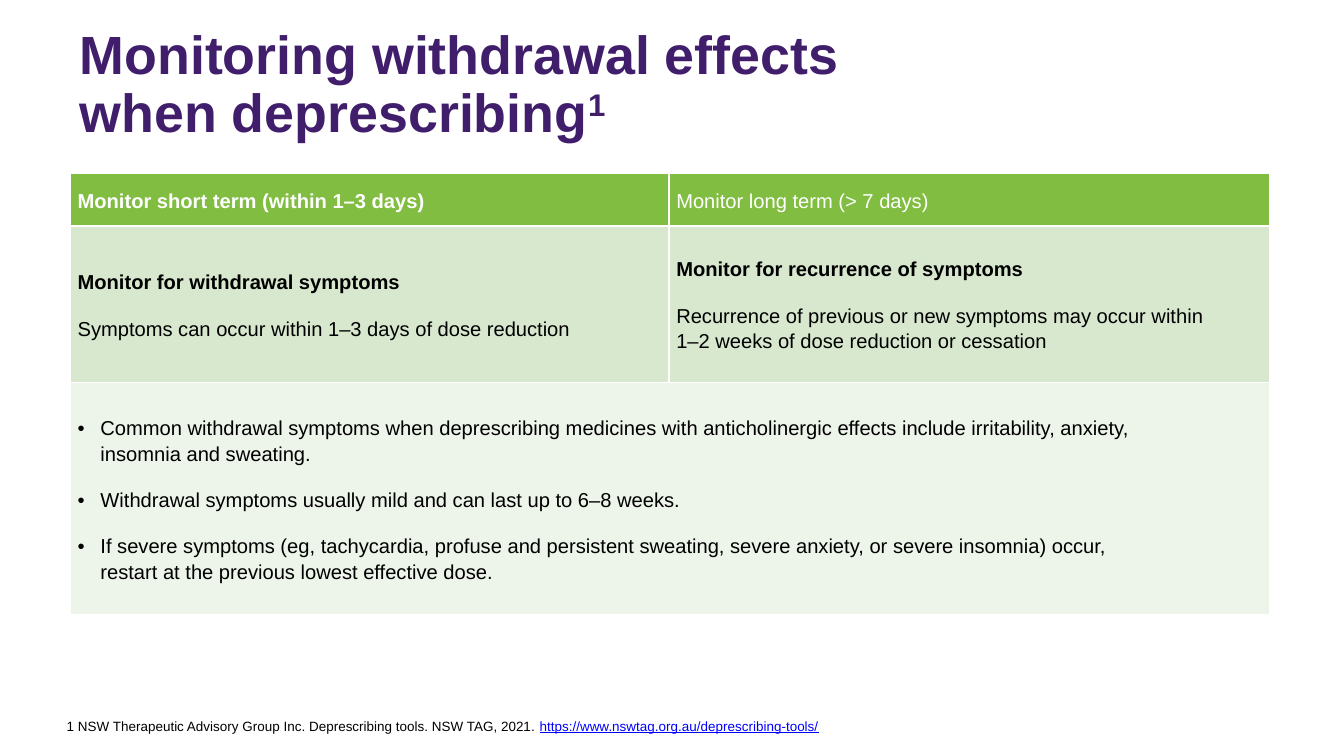
import pptx
import pptx.dml.color
import pptx.enum.text
import pptx.util
from lxml import etree
from pptx.oxml.ns import qn

Cm = pptx.util.Cm
Pt = pptx.util.Pt
RGBColor = pptx.dml.color.RGBColor
Anchor = pptx.enum.text.MSO_ANCHOR

PURPLE = RGBColor(0x40, 0x1E, 0x6C)
GREEN = RGBColor(0x81, 0xBD, 0x41)
MID_GREEN = RGBColor(0xD8, 0xE8, 0xCF)
PALE_GREEN = RGBColor(0xED, 0xF4, 0xE9)
WHITE = RGBColor(0xFF, 0xFF, 0xFF)
BLACK = RGBColor(0, 0, 0)
LINK_BLUE = RGBColor(0, 0, 0xFF)

SYMPTOMS = [
    "Common withdrawal symptoms when deprescribing medicines with anticholinergic effects "
    "include irritability, anxiety,\vinsomnia and sweating.",
    "Withdrawal symptoms usually mild and can last up to 6–8 weeks.",
    "If severe symptoms (eg, tachycardia, profuse and persistent sweating, severe anxiety, "
    "or severe insomnia) occur,\vrestart at the previous lowest effective dose.",
]


class SlideBuilder:
    font_name = "Arial"

    def __init__(self, page):
        self.page = page

    def style(self, para, size, color, bold=False, spacing=0.9):
        para.line_spacing = spacing
        para.alignment = pptx.enum.text.PP_ALIGN.LEFT
        font = para.font
        font.name, font.size, font.bold = self.font_name, Pt(size), bold
        font.color.rgb = color

    def title(self, text, note, left, top, width, height):
        box = self.page.shapes.title
        box.left, box.top, box.width, box.height = left, top, width, height
        frame = box.text_frame
        frame.auto_size = pptx.enum.text.MSO_AUTO_SIZE.NONE
        frame.vertical_anchor = Anchor.BOTTOM
        para = frame.paragraphs[0]
        para.text = text
        span = para.add_run()
        span.text = note
        span.font._element.set("baseline", "30000")
        self.style(para, 32, PURPLE, bold=True)

    def reference(self, text, address, left, top, width, height):
        frame = self.page.shapes.add_textbox(left, top, width, height).text_frame
        frame.word_wrap = True
        frame.vertical_anchor = Anchor.BOTTOM
        frame.margin_left = frame.margin_right = frame.margin_top = frame.margin_bottom = 0
        para = frame.paragraphs[0]
        para.text = text
        span = para.add_run()
        span.text = address
        span.font.underline = True
        span.font.color.rgb = LINK_BLUE
        self.style(para, 8, BLACK)

    def table(self, left, top, widths, heights):
        table = self.page.shapes.add_table(
            len(heights), len(widths), left, top, sum(widths), sum(heights)).table
        table.first_row = table.horz_banding = False
        for column, width in zip(table.columns, widths):
            column.width = width
        for row, height in zip(table.rows, heights):
            row.height = height
        for cell in table.iter_cells():
            self.borders(cell)
        return table

    def borders(self, cell):
        properties = cell._tc.get_or_add_tcPr()
        for side in ("a:lnL", "a:lnR", "a:lnT", "a:lnB"):
            line = etree.SubElement(properties, qn(side), w=str(Pt(1)))
            fill = etree.SubElement(line, qn("a:solidFill"))
            etree.SubElement(fill, qn("a:srgbClr"), val=str(WHITE))

    def cell(self, cell, lines, fill, color=BLACK, bold_first=False, bullets=False):
        cell.fill.solid()
        cell.fill.fore_color.rgb = fill
        cell.vertical_anchor = Anchor.MIDDLE
        cell.margin_left = cell.margin_right = Cm(0.15)
        cell.margin_top = cell.margin_bottom = 0
        frame = cell.text_frame
        for index, line in enumerate(lines):
            para = frame.add_paragraph() if index else frame.paragraphs[0]
            para.text = line
            if bullets:
                self.bullet(para)
            if index < len(lines) - 1:
                para.space_after = Pt(12)
            self.style(para, 12, color, bold_first and index == 0, 1.15)

    def bullet(self, para):
        properties = para._p.get_or_add_pPr()
        properties.set("marL", str(Cm(0.48)))
        properties.set("indent", str(-Cm(0.48)))
        etree.SubElement(properties, qn("a:buFont"), typeface=self.font_name)
        etree.SubElement(properties, qn("a:buChar"), char="•")


def main():
    deck = pptx.Presentation()
    deck.slide_width, deck.slide_height = Cm(28.22), Cm(15.88)
    builder = SlideBuilder(deck.slides.add_slide(deck.slide_layouts[5]))

    # Title
    builder.title("Monitoring withdrawal effects\vwhen deprescribing", "1",
                  Cm(1.42), Cm(0.64), Cm(22.4), Cm(2.51))

    # Monitoring table
    table = builder.table(Cm(1.48), Cm(3.64), [Cm(12.57), Cm(12.62)],
                          [Cm(1.11), Cm(3.28), Cm(4.88)])
    builder.cell(table.cell(0, 0), ["Monitor short term (within 1–3 days)"],
                 GREEN, WHITE, bold_first=True)
    builder.cell(table.cell(0, 1), ["Monitor long term (> 7 days)"], GREEN, WHITE)
    builder.cell(table.cell(1, 0), ["Monitor for withdrawal symptoms",
                                    "Symptoms can occur within 1–3 days of dose reduction"],
                 MID_GREEN, bold_first=True)
    builder.cell(table.cell(1, 1), ["Monitor for recurrence of symptoms",
                                    "Recurrence of previous or new symptoms may occur within "
                                    "\v1–2 weeks of dose reduction or cessation"],
                 MID_GREEN, bold_first=True)
    table.cell(2, 0).merge(table.cell(2, 1))
    builder.cell(table.cell(2, 0), SYMPTOMS, PALE_GREEN, bullets=True)

    # Reference
    builder.reference("1 NSW Therapeutic Advisory Group Inc. Deprescribing tools. NSW TAG, 2021. ",
                      "https://www.nswtag.org.au/deprescribing-tools/",
                      Cm(1.4), Cm(14.2), Cm(20.24), Cm(1.22))

    deck.save("out.pptx")


if __name__ == "__main__":
    main()
